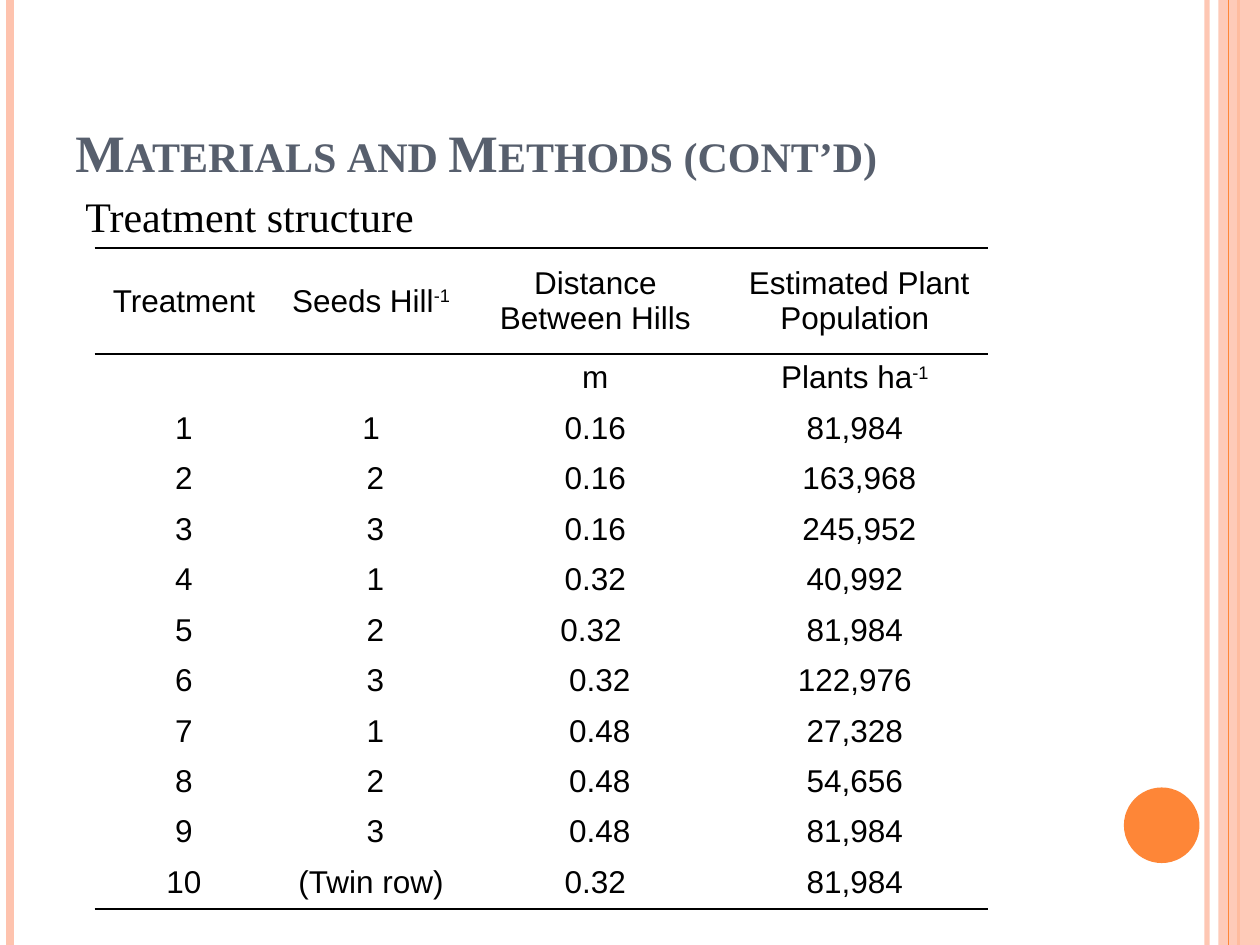
from lxml.etree import SubElement
from pptx import Presentation
from pptx.dml.color import RGBColor
from pptx.enum.shapes import MSO_CONNECTOR, MSO_SHAPE
from pptx.enum.text import MSO_ANCHOR, PP_ALIGN
from pptx.oxml import parse_xml
from pptx.oxml.ns import nsdecls, qn
from pptx.util import Inches, Pt

BLACK, SLATE, ORANGE, PEACH = "000000", "575F6D", "FE8637", "FEC3AE"


def color(value):
    return RGBColor.from_string(value)


def add_run(paragraph, text, **formats):
    run = paragraph.add_run()
    run.text = text
    run.font.color.rgb = color(formats.pop("color", BLACK))
    for name, value in formats.items():
        setattr(run.font, name, value)
    return run


presentation = Presentation()
presentation.slide_width = Inches(10)
presentation.slide_height = Inches(7.5)
slide = presentation.slides.add_slide(presentation.slide_layouts[6])
shapes = slide.shapes

# Side decoration: x, line colour, width in points, opacity in percent
stripes = [
    (9.58, PEACH, 3, 93),
    (0.08, PEACH, 4.5, 100),
    (9.83, ORANGE, 1.5, 100),
    (9.75, ORANGE, 0.75, 100),
]
panels = [
    (MSO_SHAPE.RECTANGLE, (9.67, 0, 0.33, 7.5), PEACH, 87),
    (MSO_SHAPE.OVAL, (8.92, 6.25, 0.6, 0.6), ORANGE, 100),
]


def add_stripe(x, line_color, width, opacity):
    stripe = shapes.add_connector(
        MSO_CONNECTOR.STRAIGHT, Inches(x), Inches(0), Inches(x), Inches(7.5))
    stripe.line.color.rgb = color(line_color)
    stripe.line.width = Pt(width)
    properties = stripe._element.spPr
    SubElement(properties, qn("a:effectLst"))
    if opacity < 100:
        fill_color = properties.find(".//" + qn("a:srgbClr"))
        SubElement(fill_color, qn("a:alpha"), val=str(opacity * 1000))


for stripe in stripes[:3]:
    add_stripe(*stripe)
for preset, box, fill, opacity in panels:
    shape = shapes.add_shape(preset, *map(Inches, box))
    shape.shadow.inherit = False
    shape.fill.solid()
    shape.fill.fore_color.rgb = color(fill)
    shape.line.fill.background()
    if opacity < 100:
        fill_color = shape._element.spPr.find(".//" + qn("a:srgbClr"))
        SubElement(fill_color, qn("a:alpha"), val=str(opacity * 1000))
    if preset == MSO_SHAPE.RECTANGLE:
        add_stripe(*stripes[3])

# Title and subtitle
headings = [
    ("Materials and Methods (cont’d)", (0.5, 0.25, 8.17, 1.25), MSO_ANCHOR.BOTTOM,
     {"size": Pt(30), "bold": True, "color": SLATE}),
    ("Treatment structure", (0.58, 1.46, 5, 0.5), MSO_ANCHOR.TOP, {"size": Pt(24)}),
]
for text, box, anchor, formats in headings:
    frame = shapes.add_textbox(*map(Inches, box)).text_frame
    frame.word_wrap = True
    frame.vertical_anchor = anchor
    run = add_run(frame.paragraphs[0], text, name="Times New Roman", **formats)
    if formats.get("bold"):
        run._r.get_or_add_rPr().set("cap", "small")

# Treatment table; "^" starts a superscript
rows = [
    ("Treatment", "Seeds Hill^-1", "Distance Between Hills", " Estimated Plant Population"),
    ("", "", "m", "Plants ha^-1"),
    ("1", "1", "0.16", "81,984"),
    ("2", " 2", "0.16", " 163,968"),
    ("3", " 3", "0.16", " 245,952"),
    ("4", " 1", "0.32", "40,992"),
    ("5", " 2", "0.32 ", "81,984"),
    ("6", " 3", " 0.32", "122,976"),
    ("7", " 1", " 0.48", "27,328"),
    ("8", " 2", " 0.48", "54,656"),
    ("9", " 3", " 0.48", "81,984"),
    ("10", "(Twin row)", "0.32", "81,984"),
]
last_row = len(rows) - 1
rules = {0: ("lnT", "lnB"), 1: ("lnT",), last_row: ("lnB",)}
table = shapes.add_table(len(rows), 4, Inches(0.75), Inches(1.97),
                         Inches(7.08), Inches(5.25)).table
table.first_row = False
table.horz_banding = False
for column, width in zip(table.columns, (1.42, 1.55, 2.01, 2.11)):
    column.width = Inches(width)
for row in table.rows:
    row.height = Inches(0.4)
table.rows[0].height = Inches(0.84)

for row_index, row in enumerate(rows):
    for column_index, text in enumerate(row):
        cell = table.cell(row_index, column_index)
        cell.vertical_anchor = MSO_ANCHOR.MIDDLE if row_index == 0 else MSO_ANCHOR.TOP
        properties = cell._tc.get_or_add_tcPr()
        for side in ("lnL", "lnR", "lnT", "lnB"):
            if side in rules.get(row_index, ()):
                fill = f'<a:solidFill><a:srgbClr val="{BLACK}"/></a:solidFill>'
            else:
                fill = "<a:noFill/>"
            properties.append(parse_xml(
                f'<a:{side} {nsdecls("a")} w="{Pt(1)}">{fill}</a:{side}>'))
        cell.fill.background()
        paragraph = cell.text_frame.paragraphs[0]
        paragraph.alignment = PP_ALIGN.CENTER
        base, _, superscript = text.partition("^")
        if base:
            add_run(paragraph, base, name="Arial", size=Pt(18))
        if superscript:
            run = add_run(paragraph, superscript, name="Arial", size=Pt(18))
            run._r.get_or_add_rPr().set("baseline", "30000")

presentation.save("out.pptx")
